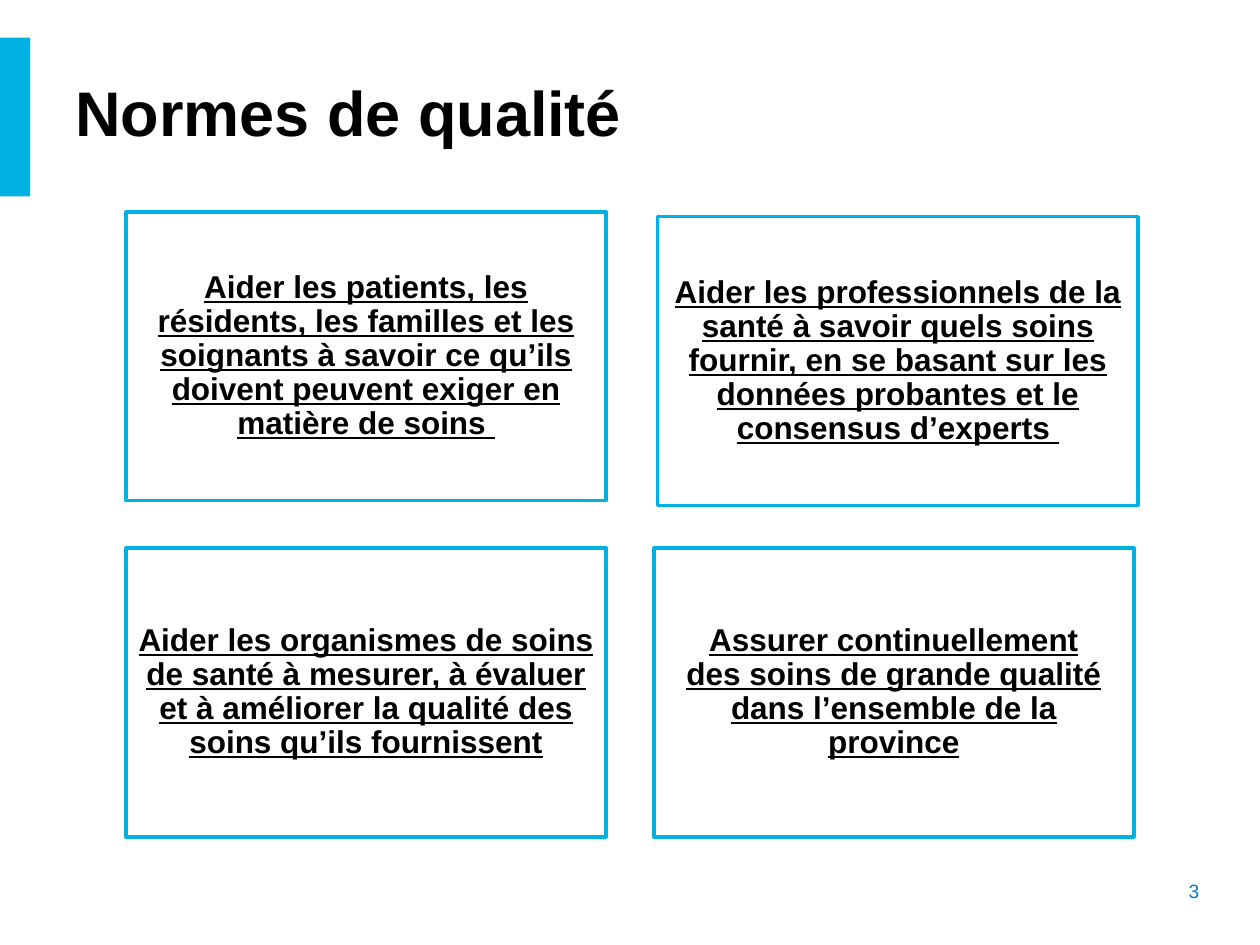
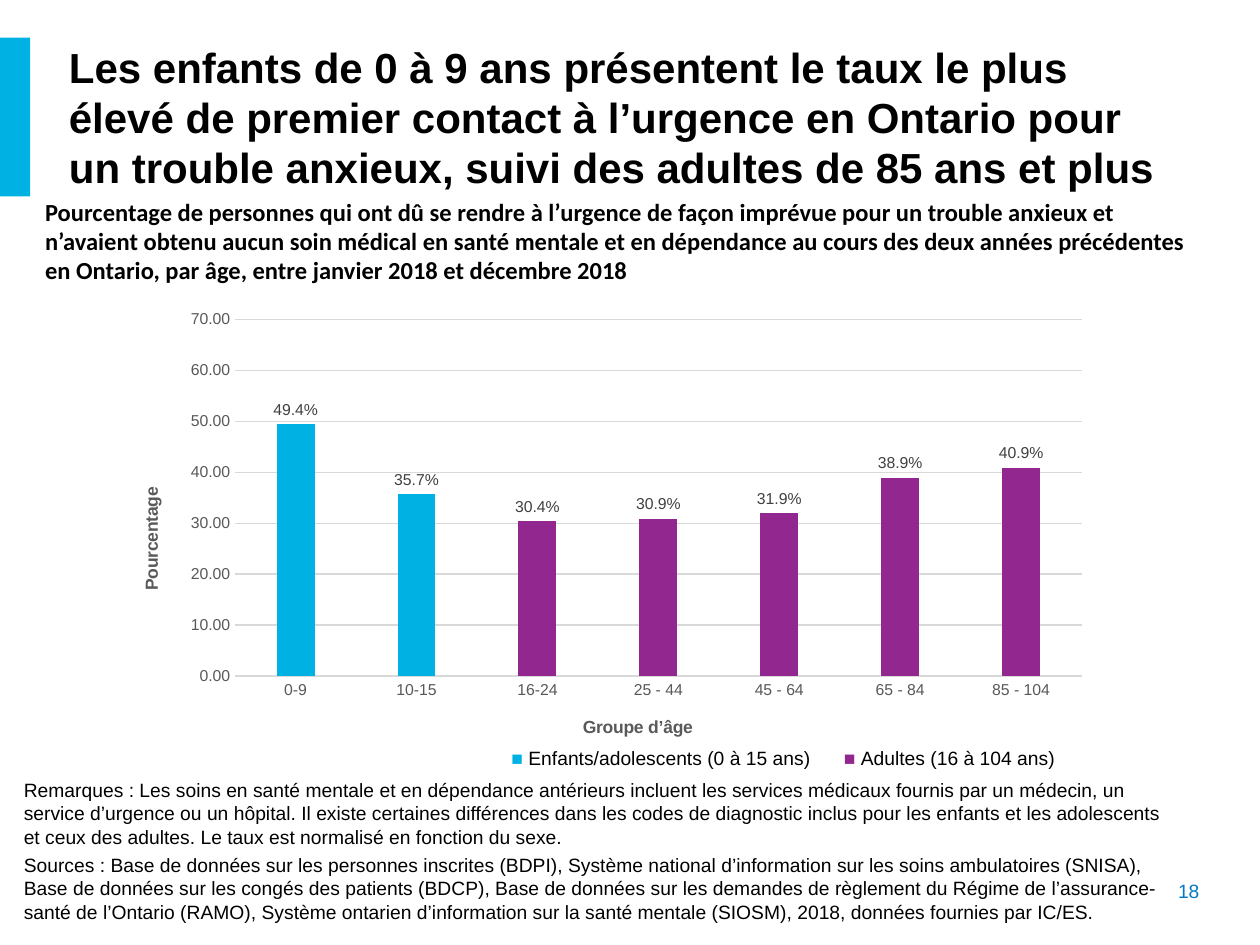
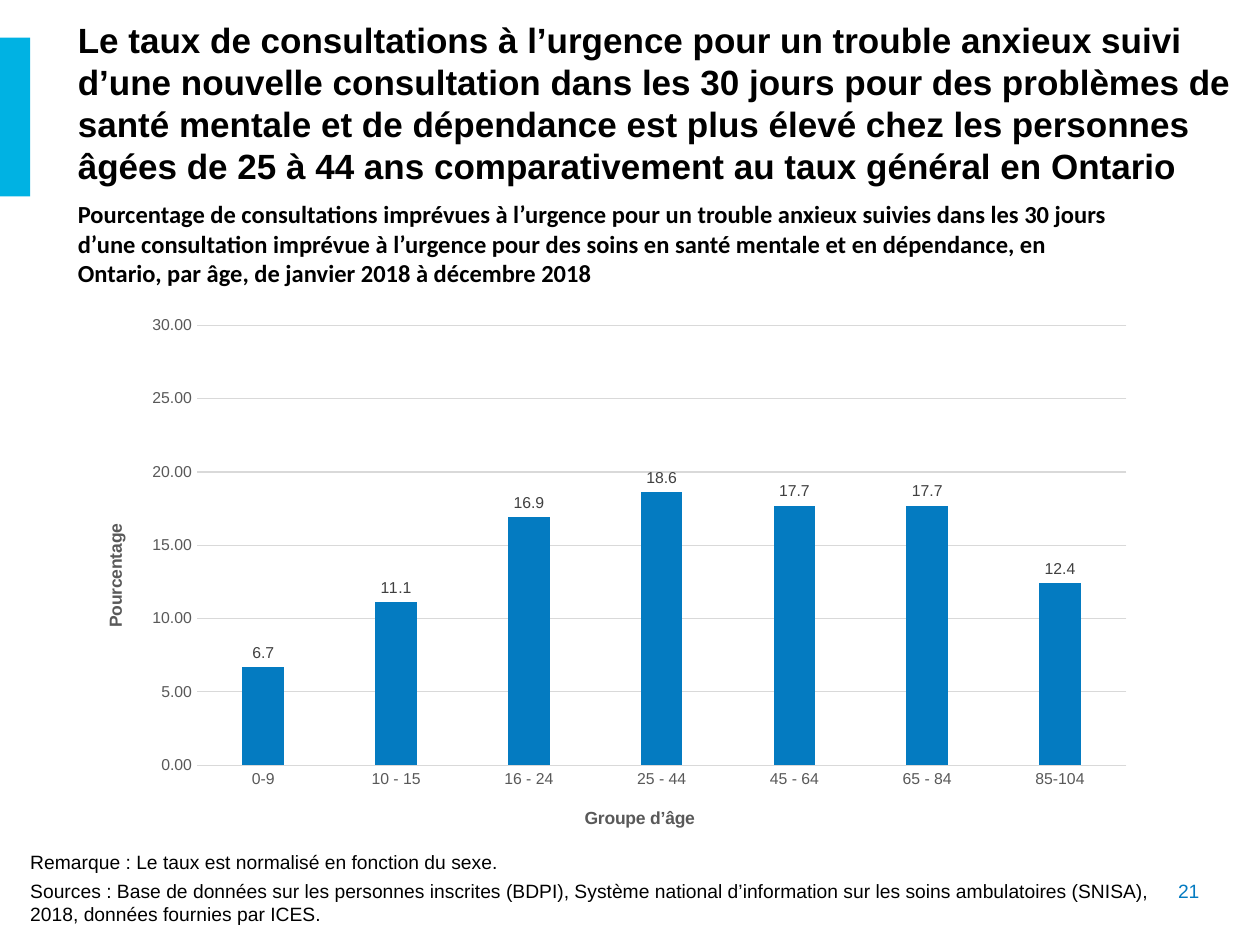
from pptx import Presentation
from pptx.chart.data import CategoryChartData
from pptx.dml.color import RGBColor
from pptx.enum.chart import XL_CHART_TYPE as Kind, XL_LABEL_POSITION as Spot
from pptx.enum.chart import XL_TICK_MARK as Tick
from pptx.enum.shapes import MSO_SHAPE as Shape
from pptx.enum.text import MSO_ANCHOR as Anchor, PP_ALIGN as Align
from pptx.oxml import parse_xml
from pptx.oxml.ns import nsdecls
from pptx.util import Cm, Pt

CYAN, BLUE, PURPLE = "00B2E3", "047BC1", "92278F"
BLACK, GRAY, DARK, PALE = "000000", "595959", "404040", "D9D9D9"

GOALS = {
    "page": 3,
    "title": ("Normes de qualité", (1.27, 1.27, 19.84, 1.96), 36),
    "size": (9.68, 5.82),
    "boxes": [
        (2.54, 4.27, ["Aider les patients, les résidents, les familles et les "
                      "soignants à savoir ce qu’ils doivent peuvent exiger en "
                      "matière de soins "]),
        (13.26, 4.37, ["Aider les professionnels de la santé à savoir quels soins "
                       "fournir, en se basant sur les données probantes et le "
                       "consensus d’experts", (" ", {"bold": False})]),
        (2.54, 11.05, ["Aider les organismes de soins de santé à mesurer, à évaluer "
                       "et à améliorer la qualité des soins qu’ils fournissent"]),
        (13.18, 11.05, ["Assurer continuellement\ndes soins de grande qualité dans "
                        "l’ensemble de la province"]),
    ],
}

FIRST = {
    "page": 18,
    "title": ("Les enfants de 0 à 9 ans présentent le taux le plus élevé de premier "
              "contact à l’urgence en Ontario pour un trouble anxieux, suivi des "
              "adultes de 85 ans et plus", (1.14, 0.69, 22.58, 3.33), 24),
    "lead": ("Pourcentage de personnes qui ont dû se rendre à l’urgence de façon "
             "imprévue pour un trouble anxieux et n’avaient obtenu aucun soin médical "
             "en santé mentale et en dépendance au cours des deux années précédentes "
             "en Ontario, par âge, entre janvier 2018 et décembre 2018",
             (0.66, 3.84, 23.55, 2.06)),
    "chart": {
        "at": (2.36, 6.07, 19.84, 9.22),
        "cats": ["0-9", "10-15", "16-24", "25 - 44", "45 - 64", "65 - 84", "85 - 104"],
        "vals": [49.4, 35.7, 30.4, 30.9, 31.9, 38.9, 40.9],
        "fills": [CYAN] * 2 + [PURPLE] * 5,
        "top": 70, "step": 10, "format": '0.0"%"',
        "plot": (0.12, 0.04, 0.86, 0.78),
        "names": [(0.47, 0.9), (0.02, 0.4)],
    },
    "notes": ([
        "Remarques : Les soins en santé mentale et en dépendance antérieurs incluent "
        "les services médicaux fournis par un médecin, un service d’urgence ou un "
        "hôpital. Il existe certaines différences dans les codes de diagnostic inclus "
        "pour les enfants et les adolescents et ceux des adultes. Le taux est "
        "normalisé en fonction du sexe.",
        "Sources : Base de données sur les personnes inscrites (BDPI), Système "
        "national d’information sur les soins ambulatoires (SNISA), Base de données "
        "sur les congés des patients (BDCP), Base de données sur les demandes de "
        "règlement du Régime de l’assurance-santé de l’Ontario (RAMO), Système "
        "ontarien d’information sur la santé mentale (SIOSM), 2018, données fournies "
        "par IC/ES."], (0.23, 15.57, 23.72, 3.84)),
    "key": ([("■ ", {"color": CYAN}), "Enfants/adolescents (0 à 15 ans)\t",
             ("■ ", {"color": PURPLE}), "Adultes (16 à 104 ans)"],
            (10.06, 14.91, 11.56, 0.71), 6.7),
}

AGAIN = {
    "page": 21,
    "title": ("Le taux de consultations à l’urgence pour un trouble anxieux suivi d’une "
              "nouvelle consultation dans les 30 jours pour des problèmes de santé "
              "mentale et de dépendance est plus élevé chez les personnes âgées de "
              "25 à 44 ans comparativement au taux général en Ontario",
              (1.32, 0.23, 23.8, 3.68), 20),
    "lead": ("Pourcentage de consultations imprévues à l’urgence pour un trouble anxieux "
             "suivies dans les 30 jours d’une consultation imprévue à l’urgence pour "
             "des soins en santé mentale et en dépendance, en Ontario, par âge, de "
             "janvier 2018 à décembre 2018", (1.32, 3.89, 21.82, 2.06)),
    "chart": {
        "at": (1.6, 6.12, 21.54, 10.95),
        "cats": ["0-9", "10 - 15", "16 - 24", "25 - 44", "45 - 64", "65 - 84", "85-104"],
        "vals": [6.7, 11.1, 16.9, 18.6, 17.7, 17.7, 12.4],
        "fills": [BLUE] * 7,
        "top": 30, "step": 5, "format": "#,##0.0",
        "plot": (0.11, 0.04, 0.87, 0.81),
        "names": [(0.47, 0.92), (0.02, 0.4)],
    },
    "notes": ([
        "Remarque : Le taux est normalisé en fonction du sexe.",
        "Sources : Base de données sur les personnes inscrites (BDPI), Système "
        "national d’information sur les soins ambulatoires (SNISA), 2018, données "
        "fournies par ICES."], (0.36, 17.02, 23.72, 1.8)),
}


def rgb(code):
    return RGBColor.from_string(code)


def style(font, size=11, color=BLACK, bold=False, line=False, face="Arial"):
    font.name, font.size, font.bold = face, Pt(size), bold
    font.underline = line
    font.color.rgb = rgb(color)


def write(shape, paras, align=Align.LEFT, anchor=Anchor.TOP, before=0, pitch=None,
          inset=None, **look):
    """Fill a shape with paragraphs, each a text or a list of texts and (text, look)."""
    frame = shape.text_frame
    frame.word_wrap, frame.vertical_anchor = True, anchor
    if inset is not None:
        frame.margin_left = frame.margin_right = Cm(inset)
        frame.margin_top = frame.margin_bottom = Cm(inset)
    for i, runs in enumerate(paras):
        para = frame.add_paragraph() if i else frame.paragraphs[0]
        para.alignment, para.space_before = align, Pt(before)
        if pitch:
            para.line_spacing = pitch
        for part in [runs] if isinstance(runs, str) else runs:
            text, extra = (part, {}) if isinstance(part, str) else part
            for j, row in enumerate(text.split("\n")):
                if j:
                    para.add_line_break()
                run = para.add_run()
                run.text = row
                style(run.font, **{**look, **extra})
    return frame


def label(slide, at, paras, **look):
    return write(slide.shapes.add_textbox(*map(Cm, at)), paras, **look)


def block(slide, at, fill=None, edge=None):
    shape = slide.shapes.add_shape(Shape.RECTANGLE, *map(Cm, at))
    shape.shadow.inherit = False
    if fill:
        shape.fill.solid()
        shape.fill.fore_color.rgb = rgb(fill)
    else:
        shape.fill.background()
    if edge:
        shape.line.color.rgb, shape.line.width = rgb(edge), Pt(2)
    else:
        shape.line.fill.background()
    return shape


def start(deck, data):
    """Add a slide with the band, page number and title that all slides share."""
    slide = deck.slides.add_slide(deck.slide_layouts[6])
    label(slide, (21.46, 17.6, 2.97, 0.74), [str(data["page"])],
          align=Align.RIGHT, color=BLUE)
    block(slide, (0, 0.76, 0.61, 3.2), fill=CYAN)
    text, at, size = data["title"]
    label(slide, at, [text], size=size, bold=True, anchor=Anchor.MIDDLE)
    return slide


def layout(x, y, w=None, h=None):
    """Return the XML that fixes a chart part, in fractions of the chart."""
    inner = '<c:layoutTarget val="inner"/>' if w else ""
    modes = '<c:xMode val="edge"/><c:yMode val="edge"/>'
    sizes = "".join(f'<c:{tag} val="{val}"/>'
                    for tag, val in zip("xywh", (x, y, w, h)) if val is not None)
    return parse_xml(f'<c:layout {nsdecls("c")}><c:manualLayout>{inner}{modes}{sizes}'
                     "</c:manualLayout></c:layout>")


def place(part, spot):
    for old in part.xpath("./c:layout"):
        part.remove(old)
    heads = part.xpath("./c:tx")
    if heads:
        heads[0].addnext(layout(*spot))
    else:
        part.insert(0, layout(*spot))


def draw(slide, info):
    """Add the column chart by age group."""
    data = CategoryChartData()
    data.categories = info["cats"]
    data.add_series("Pourcentage", info["vals"])
    chart = slide.shapes.add_chart(Kind.COLUMN_CLUSTERED, *map(Cm, info["at"]),
                                   data).chart
    chart.has_legend = chart.has_title = False
    style(chart.font, size=10)
    base, scale = chart.category_axis, chart.value_axis
    for axis, name, spot in zip((base, scale), ("Groupe d’âge", "Pourcentage"),
                                info["names"]):
        style(axis.tick_labels.font, size=9, color=GRAY)
        axis.major_tick_mark = axis.minor_tick_mark = Tick.NONE
        para = axis.axis_title.text_frame.paragraphs[0]
        run = para.add_run()
        run.text = name
        style(run.font, size=10, color=GRAY, bold=True)
        place(axis.axis_title._element, spot)
    scale.minimum_scale, scale.maximum_scale = 0, info["top"]
    scale.major_unit = info["step"]
    scale.tick_labels.number_format = "####0.00"
    scale.tick_labels.number_format_is_linked = False
    scale.format.line.fill.background()
    for line in (base.format.line, scale.major_gridlines.format.line):
        line.color.rgb, line.width = rgb(PALE), Pt(0.75)

    plot = chart.plots[0]
    plot.gap_width, plot.overlap, plot.vary_by_categories = 219, -27, False
    plot.has_data_labels = True
    tags = plot.data_labels
    tags.show_value, tags.position = True, Spot.OUTSIDE_END
    tags.number_format, tags.number_format_is_linked = info["format"], False
    style(tags.font, size=9, color=DARK)
    series, fills = plot.series[0], info["fills"]
    series.format.fill.solid()
    series.format.fill.fore_color.rgb = rgb(fills[0])
    for i, color in enumerate(fills):
        if color != fills[0]:
            fill = series.points[i].format.fill
            fill.solid()
            fill.fore_color.rgb = rgb(color)
    place(chart._chartSpace.chart.plotArea, info["plot"])


def goals(deck, data):
    slide = start(deck, data)
    for x, y, runs in data["boxes"]:
        write(block(slide, (x, y, *data["size"]), edge=CYAN), [runs],
              align=Align.CENTER, anchor=Anchor.MIDDLE, pitch=0.9, inset=0.18,
              size=18, bold=True, line=True)


def rates(deck, data):
    slide = start(deck, data)
    text, at = data["lead"]
    label(slide, at, [text], size=14, bold=True, face="Calibri")
    draw(slide, data["chart"])
    paras, at = data["notes"]
    label(slide, at, paras, before=3.3)
    if "key" in data:
        runs, at, stop = data["key"]
        frame = label(slide, at, [runs])
        tabs = parse_xml(f'<a:tabLst {nsdecls("a")}><a:tab pos="{Cm(stop)}" algn="l"/>'
                         "</a:tabLst>")
        frame.paragraphs[0]._p.get_or_add_pPr().append(tabs)


def main():
    deck = Presentation()
    deck.slide_width, deck.slide_height = Cm(25.4), Cm(19.05)
    goals(deck, GOALS)
    rates(deck, FIRST)
    rates(deck, AGAIN)
    deck.save("out.pptx")


if __name__ == "__main__":
    main()
